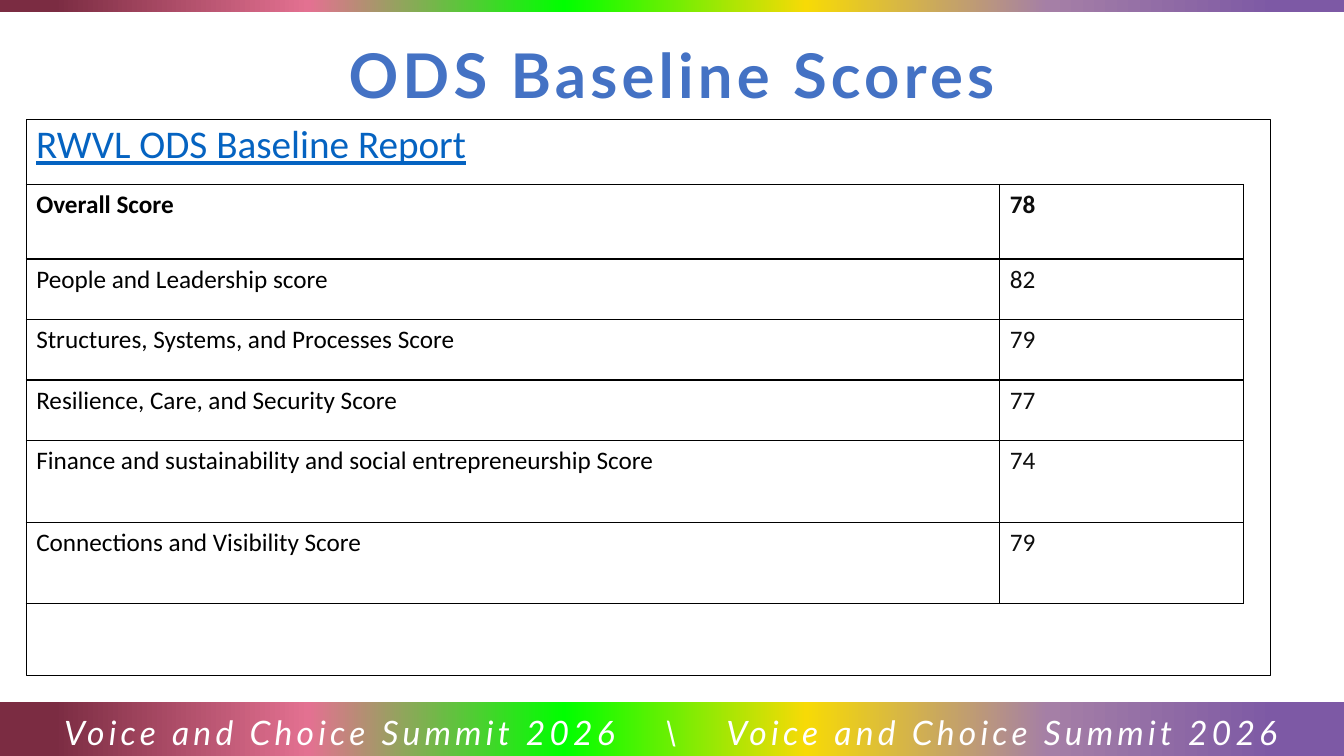
from lxml.etree import SubElement
from pptx import Presentation
from pptx.dml.color import RGBColor
from pptx.enum.shapes import MSO_SHAPE as Shape
from pptx.enum.text import MSO_ANCHOR as Anchor, PP_ALIGN as Align
from pptx.oxml.ns import qn
from pptx.util import Inches, Pt

WIDTH, HEIGHT = 13.33, 7.5
TITLE = "ODS Baseline Scores"
REPORT = "RWVL ODS Baseline Report"
SUMMIT = "Voice and Choice Summit 2026"
# Text and letter spacing in points; the wide spaces set the separator apart.
FOOTER = [(SUMMIT, 3), (" ", 26), ("\\", 3), (" ", 26), (SUMMIT, 3)]
SCORES = [
    ("Overall Score", 78, 0.74),
    ("People and Leadership score", 82, 0.6),
    ("Structures, Systems, and Processes Score", 79, 0.6),
    ("Resilience, Care, and Security Score", 77, 0.6),
    ("Finance and sustainability and social entrepreneurship Score", 74, 0.81),
    ("Connections and Visibility Score", 79, 0.81),
]
RAINBOW = [(5, "7D59A5"), (22, "A57FA6"), (40, "F7DA06"),
           (58, "00FF00"), (77, "E37191"), (96, "7B2C42")]
BANDS = [(0, 0.12), (6.96, 0.57)]  # top, height
LEFT = 0.26
TABLE_TOP, TABLE_WIDTH = 1.83, 12.07
COLUMN_SHARES = (0.8, 0.2)


def color(value):
    return RGBColor.from_string(value)


def place(shape, left, top, width, height):
    shape.left, shape.top = Inches(left), Inches(top)
    shape.width, shape.height = Inches(width), Inches(height)


def style(para, name, size, ink, bold=False, italic=False, underline=False):
    font = para.font
    font.name, font.size = name, Pt(size)
    font.bold, font.italic, font.underline = bold, italic, underline
    font.color.rgb = color(ink)


def add_spaced(para, text, points):
    """Add a run with letter spacing and return its properties element."""
    span = para.add_run()
    span.text = text
    props = span._r.get_or_add_rPr()
    props.set("spc", str(points * 100))
    return props


def add_solid_line(parent, tag, points, ink):
    line = SubElement(parent, qn(tag), w=str(Pt(points)))
    SubElement(SubElement(line, qn("a:solidFill")), qn("a:srgbClr"), val=ink)


def add_band(page, top, height):
    band = page.shapes.add_shape(Shape.RECTANGLE, 0, Inches(top),
                                 Inches(WIDTH), Inches(height))
    band.shadow.inherit = False
    band.line.fill.background()
    band.fill.gradient()
    band.fill.gradient_angle = 180
    stops = next(band.element.iter(qn("a:gsLst")))
    for stop in list(stops):
        stops.remove(stop)
    for share, ink in RAINBOW:
        stop = SubElement(stops, qn("a:gs"), pos=str(share * 1000))
        SubElement(stop, qn("a:srgbClr"), val=ink)


def add_title(page):
    title = page.shapes.title
    place(title, 0, 0.27, WIDTH, 0.92)
    title.text_frame.vertical_anchor = Anchor.MIDDLE
    para = title.text_frame.paragraphs[0]
    para.alignment = Align.CENTER
    style(para, "Lato", 44, "4472C4", bold=True)
    add_solid_line(add_spaced(para, TITLE, 3), "a:ln", 0.75, "000000")


def add_footer(page):
    box = page.shapes.add_textbox(0, 0, 0, 0)
    place(box, -0.01, 6.99, WIDTH, 0.49)
    box.text_frame.word_wrap = True
    para = box.text_frame.paragraphs[0]
    para.alignment, para.line_spacing = Align.CENTER, 1.07
    style(para, "Lato", 24, "FFFFFF", italic=True)
    for text, points in FOOTER:
        add_spaced(para, text, points)


def add_report_frame(page):
    box = page.shapes.add_textbox(0, 0, 0, 0)
    place(box, LEFT, 1.19, 12.34, 5.51)
    box.line.color.rgb, box.line.width = color("000000"), Pt(0.75)
    box.text_frame.word_wrap = True
    para = box.text_frame.paragraphs[0]
    para.text, para.line_spacing = REPORT, 0.9
    style(para, "Calibri", 28, "0563C1", underline=True)


def add_scores(page):
    height = sum(row_height for _, _, row_height in SCORES)
    table = page.shapes.add_table(
        len(SCORES), len(COLUMN_SHARES), Inches(LEFT), Inches(TABLE_TOP),
        Inches(TABLE_WIDTH), Inches(height)).table
    table.first_row = table.horz_banding = False
    for column, share in zip(table.columns, COLUMN_SHARES):
        column.width = Inches(TABLE_WIDTH * share)
    for index, (label, score, row_height) in enumerate(SCORES):
        row = table.rows[index]
        row.height = Inches(row_height)
        for cell, value, ink in zip(row.cells, (label, score), ("000000", "0D0D0D")):
            para = cell.text_frame.paragraphs[0]
            para.text = str(value)
            style(para, "Calibri", 18, ink, bold=index == 0)
            for side in "LRTB":
                add_solid_line(cell._tc.get_or_add_tcPr(), f"a:ln{side}", 1, "000000")
            cell.fill.solid()
            cell.fill.fore_color.rgb = color("FFFFFF")


def main():
    deck = Presentation()
    deck.slide_width, deck.slide_height = Inches(WIDTH), Inches(HEIGHT)
    page = deck.slides.add_slide(deck.slide_layouts[5])
    for top, height in BANDS:
        add_band(page, top, height)
    add_title(page)
    add_footer(page)
    add_report_frame(page)
    add_scores(page)
    deck.save("out.pptx")


if __name__ == "__main__":
    main()
